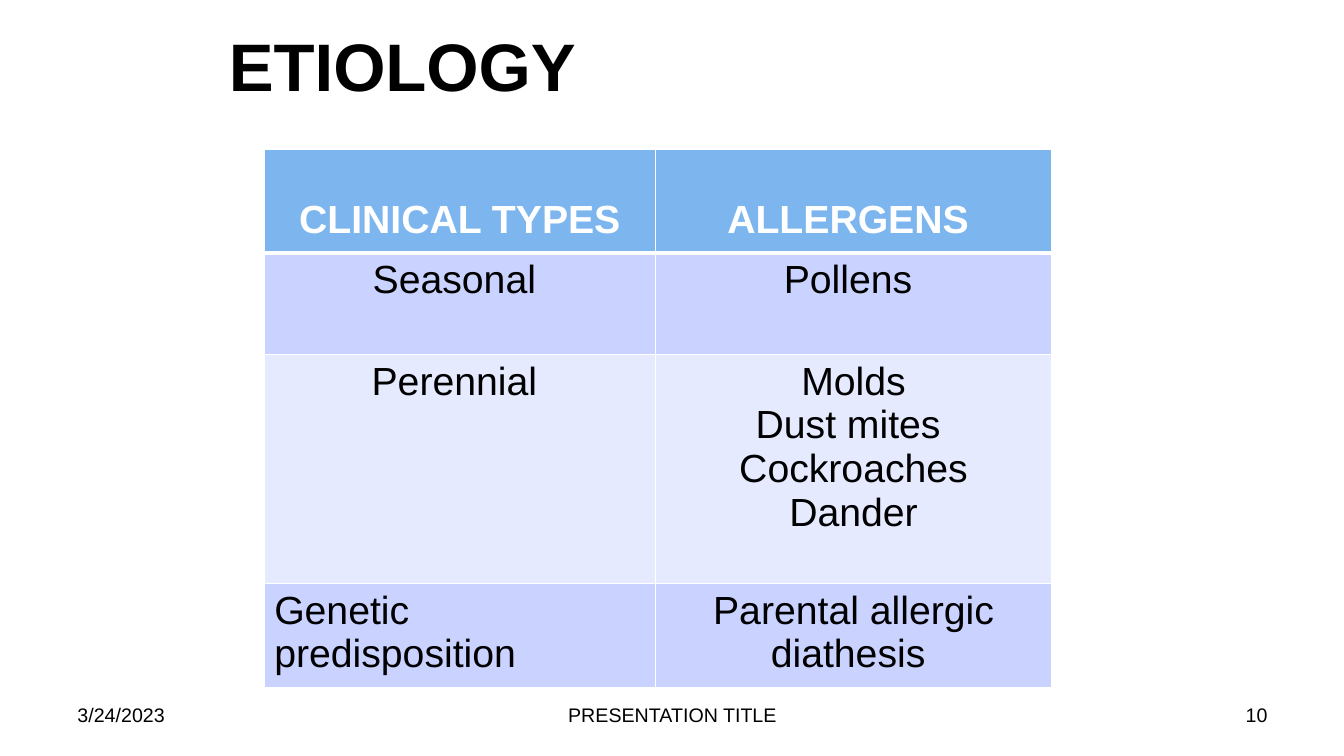
from lxml.etree import SubElement
from pptx import Presentation
from pptx.dml.color import RGBColor
from pptx.enum.text import MSO_ANCHOR as Anchor, MSO_AUTO_SIZE as AutoSize, PP_ALIGN as Align
from pptx.oxml.ns import qn
from pptx.util import Inches, Pt

BLACK = RGBColor(0x00, 0x00, 0x00)
WHITE = RGBColor(0xFF, 0xFF, 0xFF)
HEADER_BLUE = RGBColor(0x7D, 0xB6, 0xEF)
BAND_DARK = RGBColor(0xCA, 0xD2, 0xFF)
BAND_LIGHT = RGBColor(0xE6, 0xEA, 0xFF)

COLUMN_WIDTHS = [3.88, 3.93]
ROW_HEIGHTS = [1.03, 1.01, 2.27, 1.03]
# The trailing spaces belong to the centred wording
ROWS = [
    ["CLINICAL TYPES", "ALLERGENS "],
    ["Seasonal ", "Pollens "],
    ["Perennial ", "Molds\nDust mites \nCockroaches\nDander"],
    ["Genetic predisposition", "Parental allergic diathesis "],
]
# left, width, alignment, text
FOOTERS = [
    (0.67, 3.11, Align.LEFT, "3/24/2023"),
    (4.56, 4.22, Align.CENTER, "PRESENTATION TITLE"),
    (9.56, 3.11, Align.RIGHT, "10"),
]


def apply(target, values):
    for name, value in values.items():
        setattr(target, name, value)


class SlideBuilder:
    font_name = "Arial"

    def __init__(self, presentation):
        self.slide = presentation.slides.add_slide(presentation.slide_layouts[5])

    def fill_text(self, text_frame, text, size, color=BLACK, bold=False, align=Align.LEFT):
        text_frame.text = text
        for paragraph in text_frame.paragraphs:
            paragraph.alignment = align
            apply(paragraph.font, {"name": self.font_name, "size": Pt(size), "bold": bold})
            paragraph.font.color.rgb = color

    def title(self, text, left, top, width, height):
        shape = self.slide.shapes.title
        apply(shape, {"left": Inches(left), "top": Inches(top),
                      "width": Inches(width), "height": Inches(height)})
        apply(shape.text_frame, {"vertical_anchor": Anchor.TOP, "word_wrap": True,
                                 "auto_size": AutoSize.NONE})
        self.fill_text(shape.text_frame, text, 48, bold=True)

    def text_box(self, text, left, top, width, height, align):
        shape = self.slide.shapes.add_textbox(
            Inches(left), Inches(top), Inches(width), Inches(height))
        apply(shape.text_frame, {"vertical_anchor": Anchor.MIDDLE, "word_wrap": True})
        self.fill_text(shape.text_frame, text, 14, align=align)

    def borders(self, cell, widths):
        properties = cell._tc.get_or_add_tcPr()
        for side, width in widths.items():
            line = SubElement(properties, qn(f"a:ln{side}"), w=str(Pt(width)))
            fill = SubElement(line, qn("a:solidFill"))
            SubElement(fill, qn("a:srgbClr"), val=str(WHITE))

    def table(self, rows, left, top, column_widths, row_heights):
        table = self.slide.shapes.add_table(
            len(rows), len(column_widths), Inches(left), Inches(top),
            Inches(sum(column_widths)), Inches(sum(row_heights))).table
        for column, width in zip(table.columns, column_widths):
            column.width = Inches(width)
        for row, height in zip(table.rows, row_heights):
            row.height = Inches(height)
        for i, texts in enumerate(rows):
            header = i == 0
            for j, text in enumerate(texts):
                cell = table.cell(i, j)
                self.borders(cell, {"L": 1, "R": 1, "T": 3 if i == 1 else 1,
                                    "B": 3 if header else 1})
                cell.fill.solid()
                cell.fill.fore_color.rgb = (
                    HEADER_BLUE if header else BAND_DARK if i % 2 else BAND_LIGHT)
                if header:
                    apply(cell, {"vertical_anchor": Anchor.BOTTOM,
                                 "margin_bottom": Inches(0.11)})
                last_label = i == len(rows) - 1 and j == 0
                self.fill_text(cell.text_frame, text, 28, WHITE if header else BLACK,
                               header, Align.LEFT if last_label else Align.CENTER)


def main():
    presentation = Presentation()
    apply(presentation, {"slide_width": Inches(13.33), "slide_height": Inches(7.5)})
    builder = SlideBuilder(presentation)

    # Footer line
    for left, width, align, text in FOOTERS:
        builder.text_box(text, left, 6.83, width, 0.52, align)

    # Clinical types and their allergens
    builder.table(ROWS, 2.62, 1.48, COLUMN_WIDTHS, ROW_HEIGHTS)

    # Heading
    builder.title("ETIOLOGY", 2.17, 0.19, 8.89, 0.91)

    presentation.save("out.pptx")


if __name__ == "__main__":
    main()
